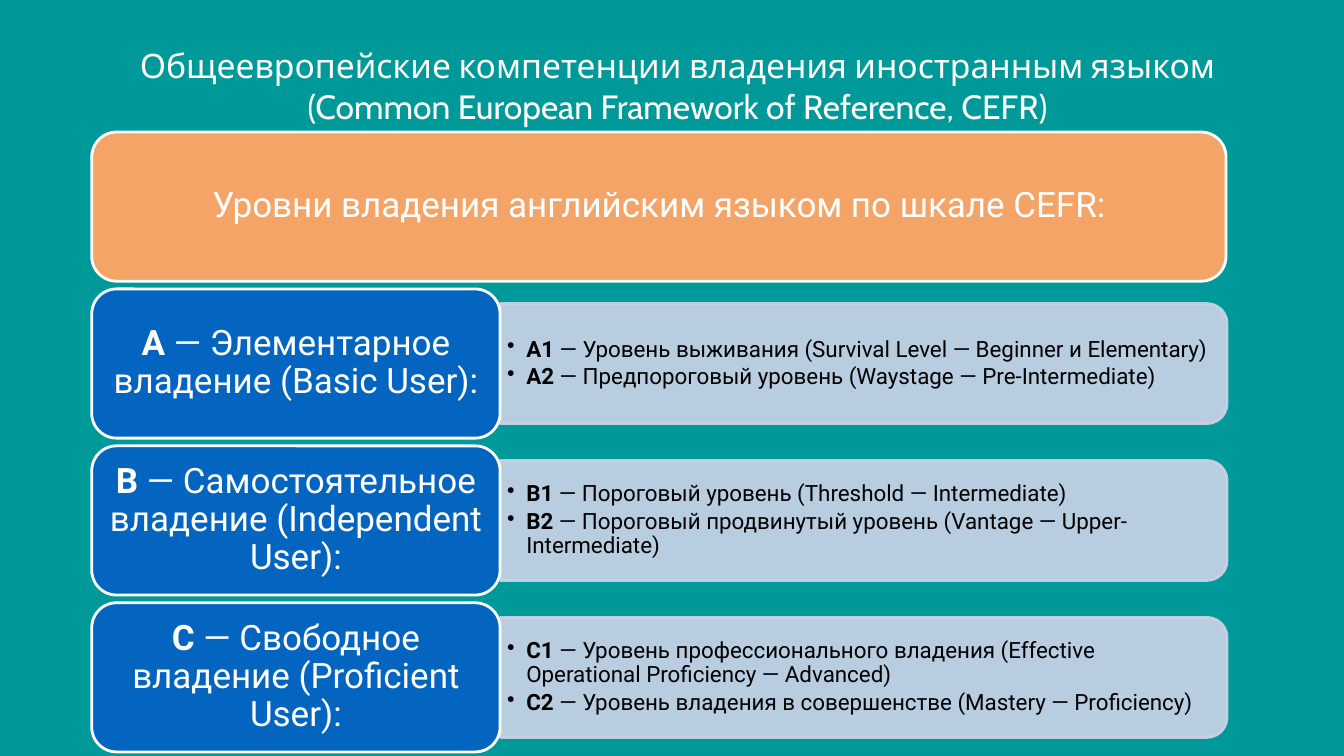
"""Build a slide on the CEFR levels of language proficiency."""
from lxml.etree import SubElement
from pptx import Presentation
from pptx.dml.color import RGBColor
from pptx.enum.shapes import MSO_SHAPE
from pptx.enum.text import MSO_ANCHOR, MSO_AUTO_SIZE, PP_ALIGN
from pptx.oxml.ns import qn
from pptx.util import Inches, Pt

TEAL, ORANGE, BLUE, PALE = "009999", "F4A467", "0365C0", "CCD3E8"
WHITE, BLACK = "FFFFFF", "000000"
LEFT, HEADER_WIDTH, LEVEL_WIDTH, ROW_HEIGHT = 0.91, 11.25, 4.05, 1.48
FIRST_TOP, LAST_TOP = 1.31, 5.98
BAR_LENGTH, BAR_HEIGHT = 7.21, 1.19
LIST_WIDTH, LIST_HEIGHT = 7.15, 1.07

TITLE = [
    "Общеевропейские компетенции владения иностранным языком",
    "(Common European Framework of Reference, CEFR)",
]
HEADER = "Уровни владения английским языком по шкале CEFR:"
LEVELS = [
    (("A", " — Элементарное владение (Basic User):"), [
        ("A1", " — Уровень выживания (Survival Level — Beginner и Elementary)"),
        ("A2", " — Предпороговый уровень (Waystage — Pre-Intermediate)"),
    ]),
    (("B", " — Самостоятельное владение (Independent User):"), [
        ("B1", " — Пороговый уровень (Threshold — Intermediate)"),
        ("B2", " — Пороговый продвинутый уровень (Vantage — Upper-Intermediate)"),
    ]),
    (("C", " — Свободное владение (Proficient User):"), [
        ("C1", " — Уровень профессионального владения "
               "(Effective Operational Proficiency — Advanced)"),
        ("C2", " — Уровень владения в совершенстве (Mastery — Proficiency)"),
    ]),
]


def color(value):
    return RGBColor.from_string(value)


def style(paragraph, font_name, size, text_color):
    paragraph.font.name = font_name
    paragraph.font.size = Pt(size)
    paragraph.font.color.rgb = color(text_color)


def set_frame(frame, horizontal, vertical, anchor):
    frame.word_wrap = True
    frame.auto_size = MSO_AUTO_SIZE.NONE
    frame.vertical_anchor = anchor
    frame.margin_left = frame.margin_right = Inches(horizontal)
    frame.margin_top = frame.margin_bottom = Inches(vertical)


def write_label(paragraph, code, description):
    if code:
        paragraph.add_run().text = code
        paragraph.runs[0].font.bold = True
    paragraph.add_run().text = description


def add_title(page):
    title = page.shapes.title
    title.left, title.top = Inches(0.51), Inches(0.4)
    title.width, title.height = Inches(12.42), Inches(0.91)
    frame = title.text_frame
    set_frame(frame, 0.1, 0.05, MSO_ANCHOR.TOP)
    frame.text = "\n".join(TITLE)
    for paragraph in frame.paragraphs:
        paragraph.alignment = PP_ALIGN.CENTER
        style(paragraph, "Cabin", 24, WHITE)


def add_block(page, kind, left, top, width, height, fill, line):
    block = page.shapes.add_shape(
        kind, Inches(left), Inches(top), Inches(width), Inches(height))
    block.shadow.inherit = False
    block.fill.solid()
    block.fill.fore_color.rgb = color(fill)
    block.line.color.rgb = color(line)
    block.line.width = Pt(2)
    return block


def add_card(page, top, width, fill, code, description):
    card = add_block(page, MSO_SHAPE.ROUNDED_RECTANGLE,
                     LEFT, top, width, ROW_HEIGHT, fill, WHITE)
    set_frame(card.text_frame, 0.1, 0.05, MSO_ANCHOR.MIDDLE)
    paragraph = card.text_frame.paragraphs[0]
    paragraph.alignment = PP_ALIGN.CENTER
    paragraph.line_spacing = 0.9
    write_label(paragraph, code, description)
    style(paragraph, "Roboto", 25, WHITE)


def add_bar(page, middle):
    left = LEFT + LEVEL_WIDTH + (BAR_LENGTH - BAR_HEIGHT) / 2
    bar = add_block(page, MSO_SHAPE.ROUND_2_SAME_RECTANGLE, left,
                    middle - BAR_LENGTH / 2, BAR_HEIGHT, BAR_LENGTH, PALE, PALE)
    bar.rotation = 90
    for tint in bar._element.spPr.iter(qn("a:srgbClr")):
        SubElement(tint, qn("a:alpha"), val="90000")


def add_bullet(paragraph):
    properties = paragraph._p.get_or_add_pPr()
    indent = Inches(0.19)
    properties.set("marL", str(indent))
    properties.set("indent", str(-indent))
    SubElement(properties, qn("a:buChar"), char="•")


def add_list(page, middle, items):
    box = page.shapes.add_textbox(
        Inches(LEFT + LEVEL_WIDTH), Inches(middle - LIST_HEIGHT / 2),
        Inches(LIST_WIDTH), Inches(LIST_HEIGHT))
    frame = box.text_frame
    set_frame(frame, 0.07, 0.03, MSO_ANCHOR.MIDDLE)
    for index, (code, description) in enumerate(items):
        paragraph = frame.add_paragraph() if index else frame.paragraphs[0]
        paragraph.line_spacing = 0.9
        paragraph.space_after = Pt(2.4)
        add_bullet(paragraph)
        write_label(paragraph, code, description)
        style(paragraph, "Roboto", 16, BLACK)


def main():
    deck = Presentation()
    deck.slide_width, deck.slide_height = Inches(13.33), Inches(7.5)
    page = deck.slides.add_slide(deck.slide_layouts[5])
    page.background.fill.solid()
    page.background.fill.fore_color.rgb = color(TEAL)
    add_title(page)
    add_card(page, FIRST_TOP, HEADER_WIDTH, ORANGE, "", HEADER)
    pitch = (LAST_TOP - FIRST_TOP) / len(LEVELS)
    for row, (level, items) in enumerate(LEVELS, start=1):
        top = FIRST_TOP + row * pitch
        middle = top + ROW_HEIGHT / 2
        add_bar(page, middle)
        add_list(page, middle, items)
        add_card(page, top, LEVEL_WIDTH, BLUE, *level)
    deck.save("out.pptx")


if __name__ == "__main__":
    main()
